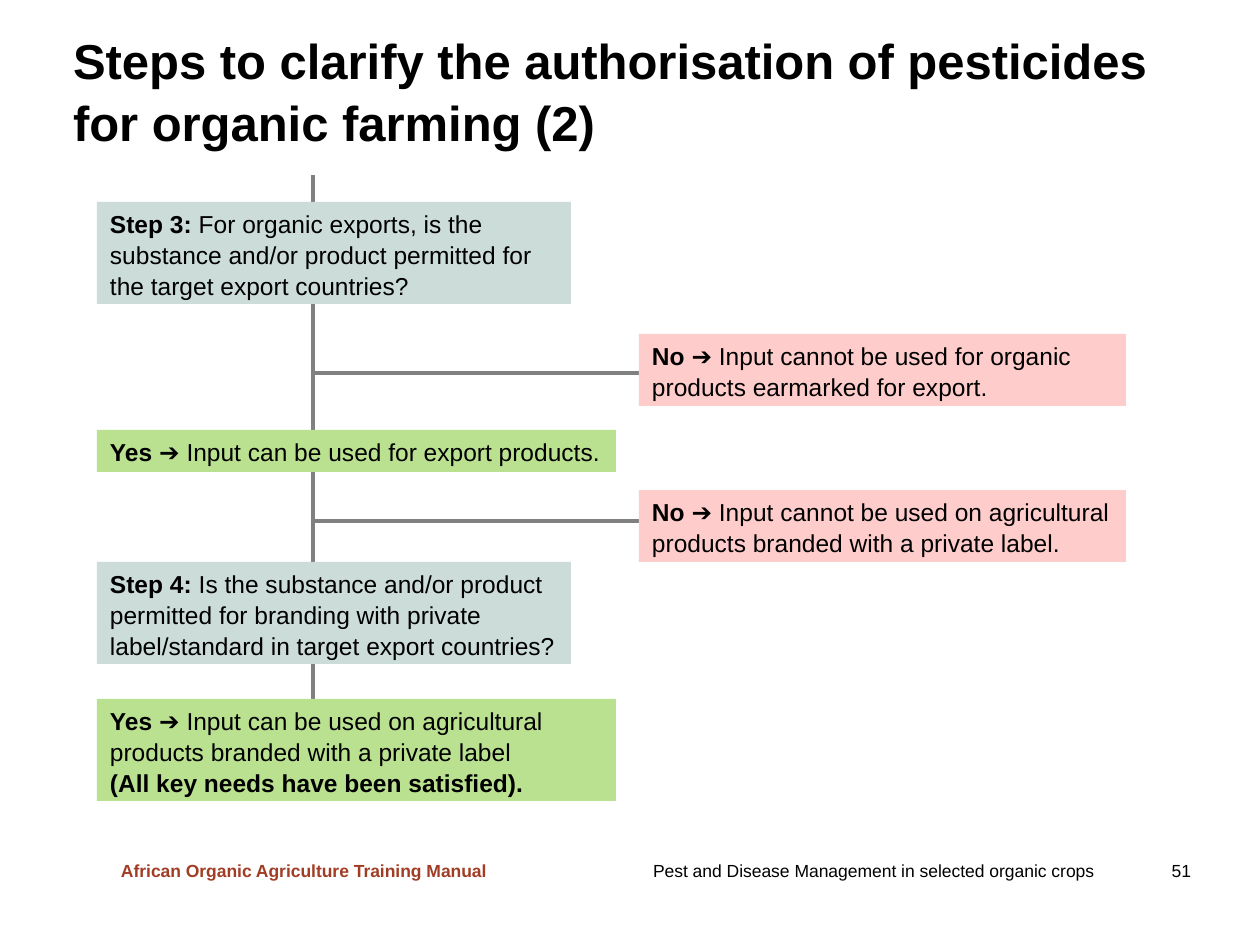
from dataclasses import dataclass

from lxml import etree
from pptx import Presentation
from pptx.dml.color import RGBColor
from pptx.enum import shapes, text
from pptx.oxml import ns
from pptx.util import Pt

SCALE = 914400 / 126


@dataclass(frozen=True)
class Theme:
    """Hold the colours, font and type sizes of the deck."""
    font: str = "Arial"
    ink: str = "000000"
    line: str = "808080"
    step: str = "CCDCD9"
    no: str = "FFCCCC"
    yes: str = "BAE18F"
    manual: str = "A23D25"
    title_size: int = 28
    body_size: int = 14
    footer_size: int = 10
    line_weight: float = 2.25


THEME = Theme()
INSETS = (13, 6, 13, 6)


def px(length):
    """Turn px into EMU."""
    return round(length * SCALE)


def apply(target, formats):
    """Set each format value on the target."""
    for name, value in formats.items():
        setattr(target, name, value)


def place(shape, box):
    """Move a shape to its box."""
    apply(shape, dict(zip(("left", "top", "width", "height"), map(px, box))))


def write(shape, lines, size, color=THEME.ink, anchor=text.MSO_ANCHOR.TOP, insets=INSETS, wrap=True):
    """Fill a shape with paragraphs of (wording, bold) spans."""
    frame = shape.text_frame
    sides = ("margin_left", "margin_top", "margin_right", "margin_bottom")
    apply(frame, dict(zip(sides, map(px, insets))))
    apply(frame, {"word_wrap": wrap, "vertical_anchor": anchor, "auto_size": text.MSO_AUTO_SIZE.NONE})
    for index, spans in enumerate(lines):
        para = frame.add_paragraph() if index else frame.paragraphs[0]
        apply(para, {"alignment": text.PP_ALIGN.LEFT, "line_spacing": 1.05, "space_before": Pt(0)})
        for wording, bold in spans:
            span = para.add_run()
            span.text = wording
            apply(span.font, {"name": THEME.font, "size": Pt(size), "bold": bold})
            span.font.color.rgb = RGBColor.from_string(color)


def add_title(page, box, wording):
    """Place the title in its placeholder."""
    place(page.shapes.title, box)
    write(page.shapes.title, [[(wording, True)]], THEME.title_size,
          anchor=text.MSO_ANCHOR.MIDDLE, insets=(0, 0, 13, 6))


def add_line(page, start, end):
    """Draw one grey line of the flow."""
    line = page.shapes.add_connector(shapes.MSO_CONNECTOR.STRAIGHT, *map(px, start + end))
    line.line.color.rgb = RGBColor.from_string(THEME.line)
    line.line.width = Pt(THEME.line_weight)
    etree.SubElement(line._element.spPr, ns.qn("a:effectLst"))


def add_card(page, box, fill, lines):
    """Draw one filled box of the flow."""
    card = page.shapes.add_shape(shapes.MSO_SHAPE.RECTANGLE, *map(px, box))
    card.shadow.inherit = False
    card.fill.solid()
    card.fill.fore_color.rgb = RGBColor.from_string(fill)
    card.line.fill.background()
    write(card, lines, THEME.body_size)


def add_flow(page, box):
    """Lay out the stem, its branches and the cards within the box."""
    left, top, width, height = box
    stem, right = left + 216, left + 542
    add_line(page, (stem, top), (stem, top + 525))
    for start, drop in ((stem - 2, 198), (stem, 346)):
        add_line(page, (start, top + drop), (right, top + drop))
    step, yes, no = (left, 474, THEME.step), (left, 519, THEME.yes), (right, width - 542, THEME.no)
    cards = (
        (step, 27, 102, "Step 3: ", "For organic exports, is the substance and/or product "
         "permitted for the target export countries?", None),
        (no, 159, 72, "No ➔ ", "Input cannot be used for organic products earmarked for export.", None),
        (yes, 255, 42, "Yes ➔ ", "Input can be used for export products.", None),
        (step, 387, 102, "Step 4: ", "Is the substance and/or product permitted for branding "
         "with private label/standard in target export countries?", None),
        (no, 315, 72, "No ➔ ", "Input cannot be used on agricultural products branded "
         "with a private label.", None),
        (yes, height - 102, 102, "Yes ➔ ", "Input can be used on agricultural products branded "
         "with a private label", "(All key needs have been satisfied)."),
    )
    for (x, wide, fill), drop, tall, label, wording, closing in cards:
        lines = [[(label, True), (wording, False)]]
        if closing:
            lines.append([(closing, True)])
        add_card(page, (x, top + drop, wide, tall), fill, lines)


def add_footer(page, box):
    """Place the manual name, the chapter and the page number."""
    left, top, width, height = box
    manual = page.shapes.add_textbox(*map(px, (left, top, 396, height)))
    write(manual, [[("African Organic Agriculture Training Manual", True)]],
          THEME.footer_size, THEME.manual, wrap=False)
    chapter = page.shapes.add_textbox(*map(px, (left + 532, top, width - 532, height)))
    write(chapter, [[("Pest and Disease Management in selected organic crops\t51", False)]],
          THEME.footer_size, anchor=text.MSO_ANCHOR.MIDDLE)
    tabs = etree.SubElement(chapter.text_frame.paragraphs[0]._p.get_or_add_pPr(), ns.qn("a:tabLst"))
    etree.SubElement(tabs, ns.qn("a:tab"), pos=str(px(538)), algn="r")


def main():
    """Build and save the deck."""
    deck = Presentation()
    apply(deck, {"slide_width": px(1260), "slide_height": px(945)})
    page = deck.slides.add_slide(deck.slide_layouts[5])
    add_title(page, (73, 32, 1137, 121),
              "Steps to clarify the authorisation of pesticides for organic farming (2)")
    add_flow(page, (97, 175, 1029, 626))
    add_footer(page, (108, 853, 1142, 34))
    deck.save("out.pptx")


if __name__ == "__main__":
    main()
